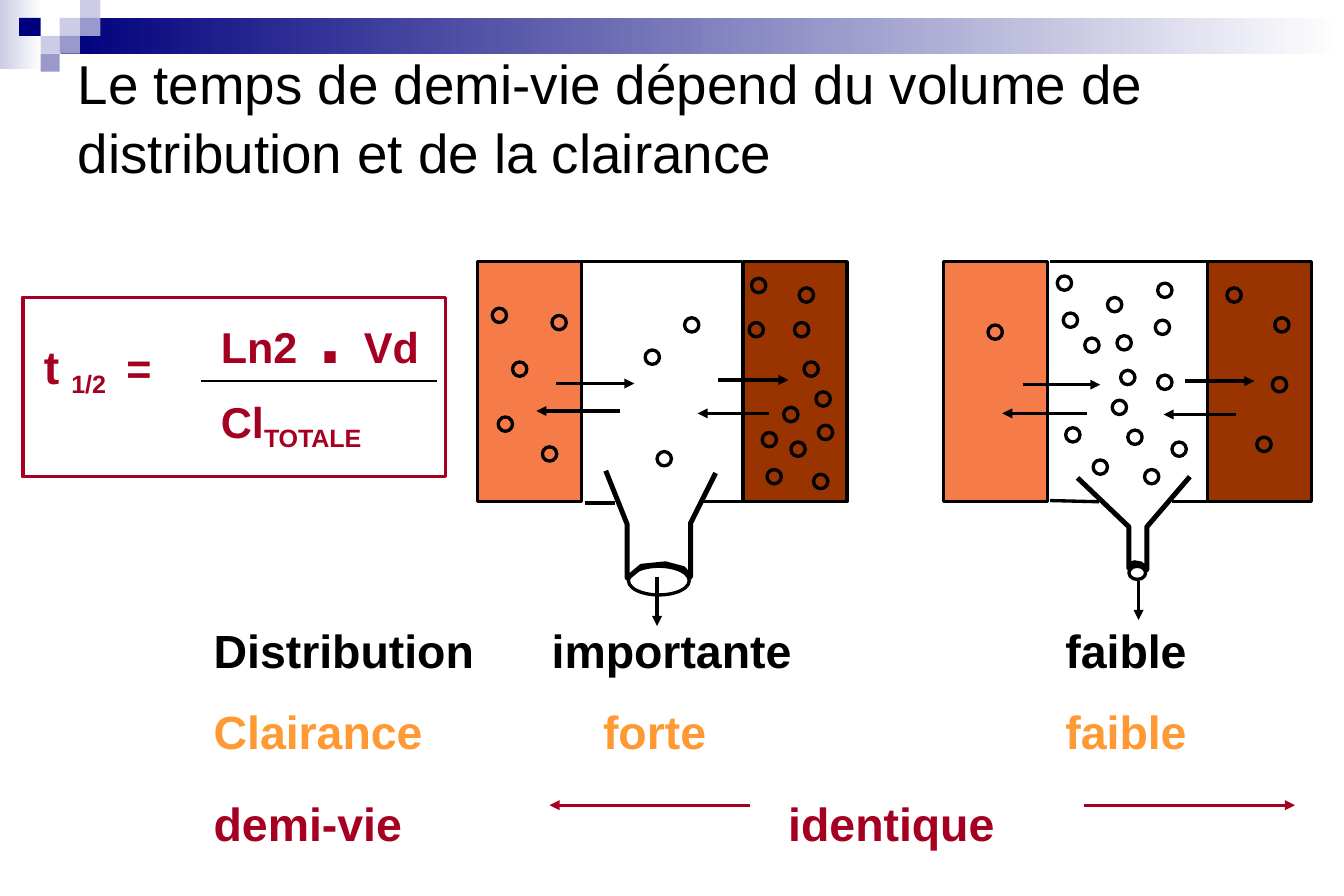
from lxml import etree
from pptx import Presentation
from pptx.dml.color import RGBColor
from pptx.enum.shapes import MSO_CONNECTOR, MSO_SHAPE
from pptx.enum.text import MSO_ANCHOR, MSO_AUTO_SIZE, PP_ALIGN
from pptx.oxml.ns import qn
from pptx.util import Cm, Pt

RECT, OVAL = MSO_SHAPE.RECTANGLE, MSO_SHAPE.OVAL
STRAIGHT = MSO_CONNECTOR.STRAIGHT
LEFT, MIDDLE, TOP = PP_ALIGN.LEFT, MSO_ANCHOR.MIDDLE, MSO_ANCHOR.TOP
NO_FIT = MSO_AUTO_SIZE.NONE

BLACK = RGBColor(0x00, 0x00, 0x00)
WHITE = RGBColor(0xFF, 0xFF, 0xFF)
NAVY = RGBColor(0x00, 0x00, 0x7D)
LILAC = RGBColor(0xCC, 0xCC, 0xE6)
VIOLET = RGBColor(0x99, 0x99, 0xCC)
CRIMSON = RGBColor(0xA5, 0x00, 0x21)
ORANGE = RGBColor(0xFF, 0x99, 0x33)
SALMON = RGBColor(0xF5, 0x7B, 0x49)
BROWN = RGBColor(0x99, 0x33, 0x00)

TILES = [(0.5, 0.15, 0.17, LILAC), (0.67, 0, 0.17, LILAC), (0.67, 0.15, 0.17, VIOLET),
         (0.34, 0.3, 0.16, LILAC), (0.16, 0.15, 0.18, NAVY), (0.5, 0.3, 0.17, VIOLET),
         (0.34, 0.45, 0.16, VIOLET)]

WIDE_TANK = {
    "tissues": [(4, SALMON), (6.22, BROWN)],
    "walls": [(4.86, 2.19, 6.21, 2.19), (4.9, 4.21, 5.15, 4.21), (6.21, 4.2, 5.87, 4.2)],
    "arrows": [(4.65, 3.21, 5.31, 3.21), (5.19, 3.44, 4.49, 3.44), (6.01, 3.18, 6.6, 3.18),
               (6.44, 3.46, 5.84, 3.46), (5.5, 4.83, 5.5, 5.24)],
    "outlet": (5.26, 4.74, 0.51, 0.24),
    "funnel": [(5.07, 3.94), (5.25, 4.39), (5.25, 4.84), (5.37, 4.74), (5.57, 4.72),
               (5.72, 4.76), (5.78, 4.83), (5.78, 4.38), (5.99, 3.96)],
    "molecules": [(4.54, 3.74), (4.29, 3.03), (4.62, 2.64), (4.12, 2.58), (4.17, 3.49),
                  (5.4, 2.93), (5.73, 2.66), (5.5, 3.78), (6.29, 2.33), (6.69, 2.41),
                  (6.27, 2.7), (6.65, 2.7), (6.73, 3.03), (6.83, 3.28), (6.56, 3.41),
                  (6.85, 3.56), (6.38, 3.62), (6.42, 3.93), (6.62, 3.7), (6.81, 3.97)],
}
NARROW_TANK = {
    "tissues": [(7.9, SALMON), (10.11, BROWN)],
    "walls": [(8.79, 2.19, 10.1, 2.19), (8.79, 4.19, 9.2, 4.2), (10.12, 4.2, 9.81, 4.2)],
    "arrows": [(8.56, 3.22, 9.21, 3.22), (9.1, 3.46, 8.39, 3.46), (9.92, 3.19, 10.5, 3.19),
               (10.35, 3.47, 9.74, 3.47), (9.53, 4.86, 9.53, 5.19)],
    "outlet": (9.45, 4.74, 0.14, 0.11),
    "funnel": [(9.02, 4), (9.45, 4.41), (9.45, 4.76), (9.49, 4.71), (9.55, 4.72),
               (9.6, 4.77), (9.6, 4.41), (9.96, 3.99)],
    "molecules": [(8.27, 2.72), (10.27, 2.41), (10.67, 2.66), (10.65, 3.16), (10.52, 3.66),
                  (8.85, 2.31), (9.27, 2.49), (9.69, 2.37), (9.35, 2.81), (9.67, 2.68),
                  (9.69, 3.14), (8.9, 2.62), (9.08, 2.83), (9.38, 3.1), (9.31, 3.35),
                  (9.44, 3.6), (9.81, 3.7), (8.92, 3.58), (9.15, 3.85), (9.58, 3.93)],
}


def cm(*inches):
    """Convert layout units (inches) to Cm lengths."""
    return [Cm(2.54 * v) for v in inches]


class SlideBuilder:
    """Holds the text style and the current slide."""

    font = {"name": "Arial", "bold": True}

    def __init__(self, s):
        self.s = s

    def outline(self, sp, color, width):
        sp.line.color.rgb = color
        sp.line.width = Pt(width)

    def shape(self, kind, box, fill=None, line=None, width=2):
        """Add a preset shape; a pair of colours as fill makes a gradient."""
        sp = self.s.shapes.add_shape(kind, *cm(*box))
        sp.shadow.inherit = False
        if fill is None:
            sp.fill.background()
        elif isinstance(fill, list):
            sp.fill.gradient()
            sp.fill.gradient_angle = 0
            for stop, color in zip(sp.fill.gradient_stops, fill):
                stop.color.rgb = color
        else:
            sp.fill.solid()
            sp.fill.fore_color.rgb = fill
        if line is None:
            sp.line.fill.background()
        else:
            self.outline(sp, line, width)

    def line(self, ends, color=BLACK, width=2, arrow=False):
        c = self.s.shapes.add_connector(STRAIGHT, *cm(*ends))
        self.outline(c, color, width)
        if arrow:
            etree.SubElement(c.line._get_or_add_ln(), qn("a:tailEnd"), type="triangle")
        etree.SubElement(c.element.spPr, qn("a:effectLst"))

    def polyline(self, points, width):
        start, *rest = [cm(*pt) for pt in points]
        builder = self.s.shapes.build_freeform(*start)
        builder.add_line_segments(rest, close=False)
        sp = builder.convert_to_shape()
        sp.shadow.inherit = False
        sp.fill.background()
        self.outline(sp, BLACK, width)

    def title(self, text, box):
        sp = self.s.shapes.title
        sp.left, sp.top, sp.width, sp.height = cm(*box)
        tf = sp.text_frame
        tf.text = text
        for key, value in {"word_wrap": True, "auto_size": NO_FIT,
                           "vertical_anchor": MIDDLE}.items():
            setattr(tf, key, value)
        p = tf.paragraphs[0]
        p.alignment, p.line_spacing = LEFT, 1.05
        for key, value in {"name": "Arial", "size": Pt(33), "bold": False}.items():
            setattr(p.runs[0].font, key, value)
        p.runs[0].font.color.rgb = BLACK
        sp.element.getparent().append(sp.element)

    def text(self, box, rows):
        """Add rows of (colour, space before, tab stops, runs); a run is (text, size, baseline)."""
        tf = self.s.shapes.add_textbox(*cm(*box)).text_frame
        tf.word_wrap, tf.vertical_anchor = True, TOP
        for i, (color, before, tabs, runs) in enumerate(rows):
            p = tf.add_paragraph() if i else tf.paragraphs[0]
            p.alignment, p.space_before = LEFT, Pt(before)
            if tabs:
                tab_list = etree.SubElement(p._p.get_or_add_pPr(), qn("a:tabLst"))
                for pos in cm(*tabs):
                    etree.SubElement(tab_list, qn("a:tab"), pos=str(int(pos)), algn="l")
            for text, size, baseline in runs:
                r = p.add_run()
                r.text = text
                for key, value in {**self.font, "size": Pt(size)}.items():
                    setattr(r.font, key, value)
                r.font.color.rgb = color
                if baseline:
                    r._r.get_or_add_rPr().set("baseline", str(baseline * 1000))

    def tank(self, tank):
        for x, color in tank["tissues"]:
            self.shape(RECT, (x, 2.19, 0.87, 2.01), color, BLACK)
        for ends in tank["walls"]:
            self.line(ends)
        for ends in tank["arrows"]:
            self.line(ends, arrow=True)
        self.shape(OVAL, tank["outlet"], line=BLACK)
        for x, y in tank["molecules"]:
            self.shape(OVAL, (x, y, 0.12, 0.12), line=BLACK)
        self.polyline(tank["funnel"], 3)


def main():
    prs = Presentation()
    prs.slide_width, prs.slide_height = cm(11.25, 7.5)
    b = SlideBuilder(prs.slides.add_slide(prs.slide_layouts[5]))

    b.shape(RECT, (0, 0, 0.35, 0.58), [LILAC, WHITE])
    b.shape(RECT, (0.51, 0.15, 10.74, 0.3), [NAVY, WHITE])
    for x, y, w, color in TILES:
        b.shape(RECT, (x, y, w, 0.15), color)
    b.title("Le temps de demi-vie dépend du volume de distribution et de la clairance",
            (0.55, 0.26, 10.41, 1.42))

    b.text((1.69, 5.16, 8.5, 1.92), [
        (BLACK, 0, (2.83, 7.13), [("Distribution\timportante\tfaible", 28, 0)]),
        (ORANGE, 15, (3.26, 7.13), [("Clairance\tforte\tfaible", 28, 0)]),
        (CRIMSON, 22, (4.81,), [("demi-vie\tidentique", 28, 0)])])
    for ends in [(6.28, 6.74, 4.6, 6.74), (9.07, 6.74, 10.84, 6.74)]:
        b.line(ends, CRIMSON, arrow=True)

    for tank in (WIDE_TANK, NARROW_TANK):
        b.tank(tank)

    for box, tabs, runs in [
            ((0.27, 2.78, 1.3, 0.57), (0.69,),
             [("t", 28, 0), (" ", 26, 0), ("1/2", 26, -20), ("\t=", 26, 0)]),
            ((1.75, 2.33, 2, 0.9), (), [("Ln2", 26, 0), (" . ", 48, 0), ("Vd", 26, 0)]),
            ((1.75, 3.26, 1.6, 0.53), (), [("Cl", 26, 0), ("TOTALE", 26, -20)])]:
        b.text(box, [(CRIMSON, 0, tabs, runs)])
    b.line((1.68, 3.19, 3.66, 3.19), width=1)
    b.shape(RECT, (0.19, 2.49, 3.54, 1.5), line=CRIMSON, width=2.25)

    prs.save("out.pptx")


if __name__ == "__main__":
    main()
